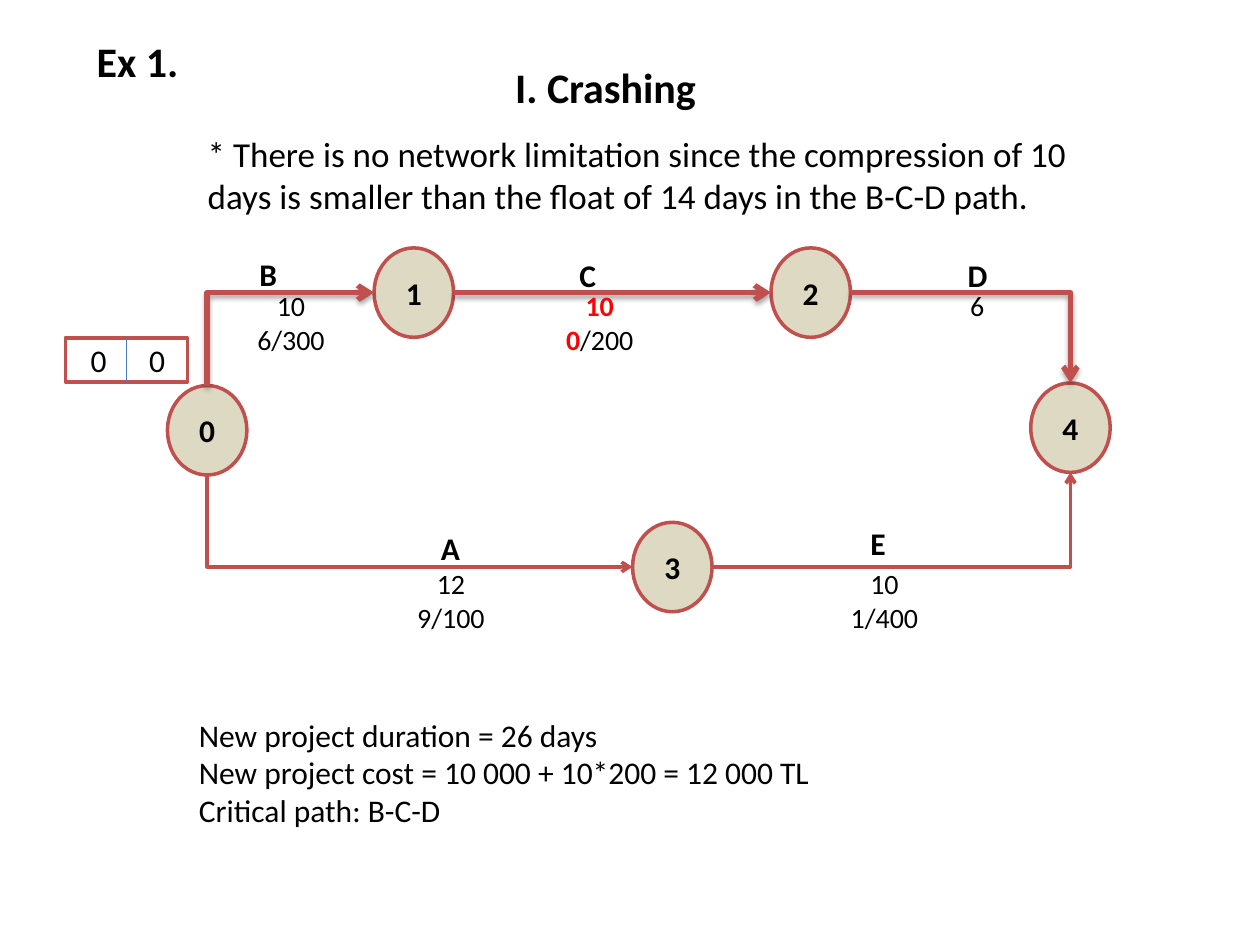
"""Build the crashing example slide with its activity-on-arrow network."""
from dataclasses import dataclass
from enum import IntEnum

from lxml.etree import SubElement
from pptx import Presentation
from pptx.dml.color import RGBColor
from pptx.enum.shapes import MSO_CONNECTOR as Connector, MSO_SHAPE as Preset
from pptx.enum.text import MSO_ANCHOR as Anchor, MSO_AUTO_SIZE as AutoSize, PP_ALIGN as Align
from pptx.oxml.ns import qn
from pptx.util import Pt

COLORS = {
    "node": "DDD9C3",
    "line": "C0504D",
    "divider": "4B7EBC",
    "text": "000000",
    "changed": "FF0000",
    "white": "FFFFFF",
}
FONT = "Calibri"
NODE_WIDTH, NODE_HEIGHT = 45.4, 51.1


class Site(IntEnum):
    """Connection sites of an ellipse."""

    TOP = 0
    LEFT = 2
    BOTTOM = 4
    RIGHT = 6


@dataclass(frozen=True)
class Node:
    """A numbered event, placed by its centre."""

    name: str
    x: float
    y: float

    def point(self, site: Site) -> tuple:
        """Return the place of a connection site."""
        across = {Site.LEFT: -0.5, Site.RIGHT: 0.5}.get(site, 0)
        down = {Site.TOP: -0.5, Site.BOTTOM: 0.5}.get(site, 0)
        return Pt(self.x + across * NODE_WIDTH), Pt(self.y + down * NODE_HEIGHT)


@dataclass(frozen=True)
class Activity:
    """An arrow between two events."""

    start: str
    start_site: Site
    end: str
    end_site: Site
    critical: bool


@dataclass(frozen=True)
class Label:
    """A text box with its format."""

    text: str
    left: float
    top: float
    width: float
    height: float
    size: float = 18
    bold: bool = False
    align: Align = Align.LEFT


NODES = [
    Node("0", 118.4, 245.9),
    Node("1", 236.5, 167.2),
    Node("2", 463.3, 167.2),
    Node("3", 384.2, 324),
    Node("4", 611.7, 244.4),
]
ACTIVITIES = [
    Activity("0", Site.TOP, "1", Site.LEFT, True),
    Activity("1", Site.RIGHT, "2", Site.LEFT, True),
    Activity("2", Site.RIGHT, "4", Site.TOP, True),
    Activity("0", Site.BOTTOM, "3", Site.LEFT, False),
    Activity("3", Site.RIGHT, "4", Site.BOTTOM, False),
]
ACTIVITY_NAMES = [
    Label(name, left, top, 38, 29, bold=True)
    for name, left, top in [
        ("B", 141.1, 142),
        ("C", 324, 142.5),
        ("D", 545.8, 142.5),
        ("A", 244.8, 298.8),
        ("E", 490.3, 296),
    ]
]
ACTIVITY_DATA = [
    Label(text, left, top, 73.4, 46, size=16, align=Align.CENTER)
    for text, left, top in [
        ("10\v6/300", 129.6, 161.3),
        ("12\v9/100", 221, 320.4),
        ("10\v1/400", 468.7, 320.4),
    ]
]
OTHER_LABELS = [
    Label("6", 547.2, 161.3, 30.2, 26.6, size=16),
    Label(
        "New project duration = 26 days\n"
        "New project cost = 10 000 + 10*200 = 12 000 TL\n"
        "Critical path: B-C-D",
        106.6, 405.4, 393, 72.7,
    ),
    Label(
        "* There is no network limitation since the compression of 10 days "
        "is smaller than the float of 14 days in the B-C-D path.",
        111.6, 72, 517, 55.4, size=20,
    ),
    Label("I. Crashing", 287.3, 31.7, 213, 36, size=24, bold=True),
    Label("Ex 1.", 48.2, 16.6, 213, 36, size=24, bold=True),
]


def rgb(name: str) -> RGBColor:
    """Return a named colour."""
    return RGBColor.from_string(COLORS[name])


def write_text(shape, text: str, *, size=18, bold=False, color="text", align=Align.LEFT) -> None:
    """Append text, with new lines as paragraphs and vertical tabs as line breaks."""
    frame = shape.text_frame
    frame.word_wrap = True
    for number, paragraph_text in enumerate(text.split("\n")):
        paragraph = frame.add_paragraph() if number else frame.paragraphs[-1]
        paragraph.alignment = align
        for line_number, line in enumerate(paragraph_text.split("\v")):
            if line_number:
                paragraph.add_line_break()
            run = paragraph.add_run()
            run.text = line
            run.font.name = FONT
            run.font.size = Pt(size)
            run.font.bold = bold
            run.font.color.rgb = rgb(color)


def add_label(slide, label: Label, color: str = "text"):
    """Add a text box for a label."""
    shape = slide.shapes.add_textbox(*map(Pt, (label.left, label.top, label.width, label.height)))
    write_text(shape, label.text, size=label.size, bold=label.bold, color=color, align=label.align)
    shape.text_frame.auto_size = AutoSize.SHAPE_TO_FIT_TEXT
    return shape


def add_box(slide, preset, left: float, top: float, width: float, height: float, fill: str):
    """Add an outlined shape."""
    shape = slide.shapes.add_shape(preset, *map(Pt, (left, top, width, height)))
    shape.shadow.inherit = False
    shape.fill.solid()
    shape.fill.fore_color.rgb = rgb(fill)
    shape.line.color.rgb = rgb("line")
    shape.line.width = Pt(2)
    shape.text_frame.vertical_anchor = Anchor.MIDDLE
    return shape


def add_node(slide, node: Node):
    """Add the ellipse of an event."""
    left, top = node.x - NODE_WIDTH / 2, node.y - NODE_HEIGHT / 2
    shape = add_box(slide, Preset.OVAL, left, top, NODE_WIDTH, NODE_HEIGHT, "node")
    write_text(shape, node.name, bold=True, align=Align.CENTER)
    return shape


def add_line(slide, kind, begin: tuple, end: tuple, color: str, width: float, shadow=False):
    """Add a connector, with a soft shadow if asked."""
    connector = slide.shapes.add_connector(kind, *begin, *end)
    connector.line.color.rgb = rgb(color)
    connector.line.width = Pt(width)
    effects = SubElement(connector.element.spPr, qn("a:effectLst"))
    if shadow:
        outer = SubElement(effects, qn("a:outerShdw"), blurRad=str(Pt(3.1)), dist=str(Pt(1.8)),
                           dir="5400000", rotWithShape="0")
        shade = SubElement(outer, qn("a:srgbClr"), val=COLORS["text"])
        SubElement(shade, qn("a:alpha"), val="35000")
    return connector


def add_activity(slide, activity: Activity, nodes: dict, shapes: dict) -> None:
    """Add an arrow, drawn from the end whose first leg is horizontal."""
    ends = [(activity.start, activity.start_site), (activity.end, activity.end_site)]
    horizontal = {Site.LEFT, Site.RIGHT}
    backward = activity.start_site not in horizontal
    bent = backward or activity.end_site not in horizontal
    if backward:
        ends.reverse()
    begin, end = (nodes[name].point(site) for name, site in ends)
    connector = add_line(slide, Connector.ELBOW if bent else Connector.STRAIGHT, begin, end,
                         "line", 3 if activity.critical else 2, activity.critical)
    if bent:
        connector.element.spPr.find(qn("a:prstGeom")).set("prst", "bentConnector2")
    line = connector.element.spPr.find(qn("a:ln"))
    SubElement(line, qn("a:headEnd" if backward else "a:tailEnd"), type="arrow")
    properties = connector.element.find(".//" + qn("p:cNvCxnSpPr"))
    for tag, (name, site) in zip(("a:stCxn", "a:endCxn"), ends):
        SubElement(properties, qn(tag), id=str(shapes[name].shape_id), idx=str(int(site)))


def add_time_box(slide) -> None:
    """Add the divided box with the two event times."""
    box = add_box(slide, Preset.RECTANGLE, 37.4, 193, 69.8, 25.2, "white")
    write_text(box, "0\t0")
    box.text_frame.margin_left = Pt(14.4)
    box.text_frame.margin_right = 0
    tabs = SubElement(box.text_frame.paragraphs[0]._p.get_or_add_pPr(), qn("a:tabLst"))
    SubElement(tabs, qn("a:tab"), pos=str(Pt(33.5)), algn="l")
    divider = add_line(slide, Connector.STRAIGHT, (0, 0), (0, 0), "divider", 0.75)
    divider.begin_connect(box, 0)
    divider.end_connect(box, 2)


def main() -> None:
    """Build and save the presentation."""
    presentation = Presentation()
    presentation.slide_width, presentation.slide_height = Pt(720), Pt(540)
    slide = presentation.slides.add_slide(presentation.slide_layouts[6])
    nodes = {node.name: node for node in NODES}
    shapes = {node.name: add_node(slide, node) for node in NODES}
    for activity in ACTIVITIES:
        add_activity(slide, activity, nodes, shapes)
    add_time_box(slide)
    for label in ACTIVITY_NAMES + ACTIVITY_DATA + OTHER_LABELS:
        add_label(slide, label)
    crashed = Label("10\v0", 306, 161.3, 73.4, 46, size=16, bold=True, align=Align.CENTER)
    write_text(add_label(slide, crashed, "changed"), "/200", size=16, align=Align.CENTER)
    presentation.save("out.pptx")


if __name__ == "__main__":
    main()
